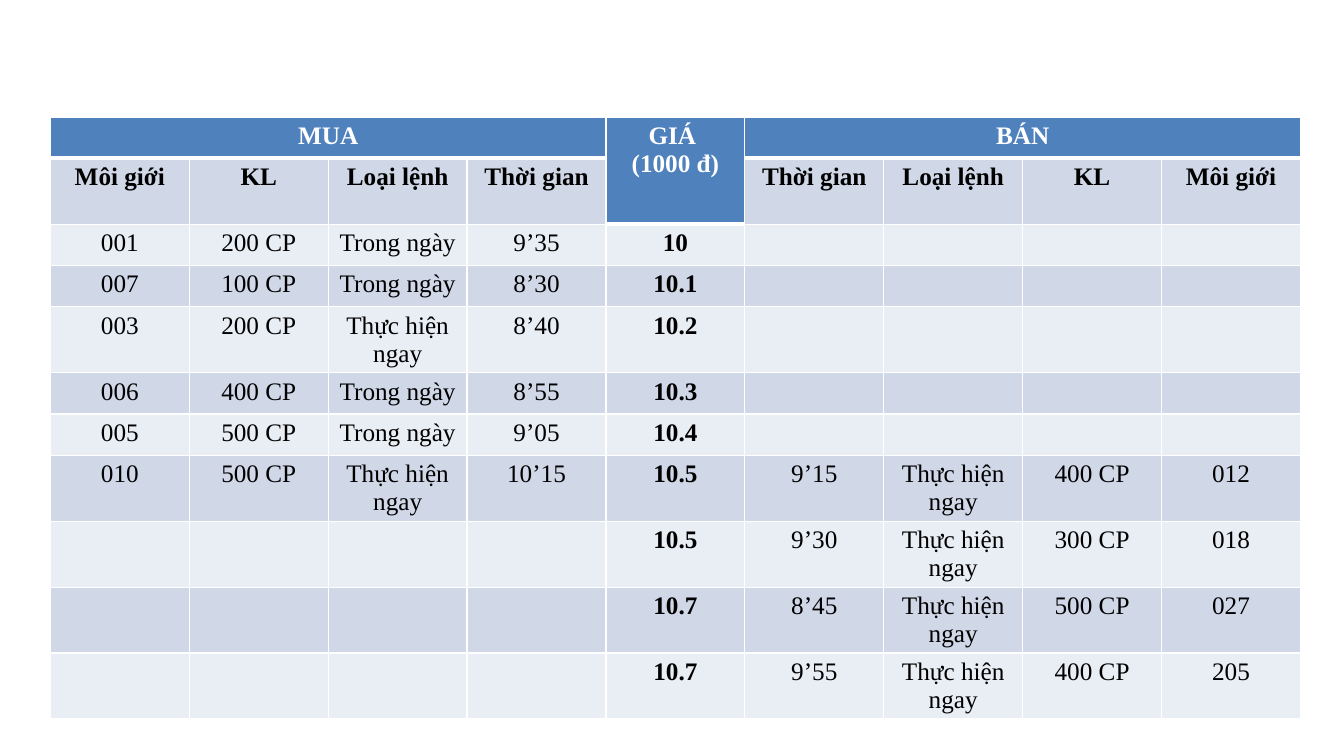
from dataclasses import dataclass

import pptx
import pptx.dml.color
import pptx.enum.text
import pptx.oxml
import pptx.oxml.ns
import pptx.util
from pptx.util import Inches


@dataclass(frozen=True)
class Theme:
    """Colours, font and sizes of the order book."""
    font: str = "Times New Roman"
    size: int = 18
    header: str = "4F81BD"
    bands: tuple = ("D0D8E8", "E9EDF4")
    light: str = "FFFFFF"
    dark: str = "000000"
    thin: int = 1
    thick: int = 3


THEME = Theme()
PRICE_COLUMN = 4
SIDE_HEADINGS = ["Môi giới", "KL", "Loại lệnh", "Thời gian"]
DAY, NOW = "Trong ngày", "Thực hiện ngay"
NO_ORDER = [""] * 4
ORDERS = [
    (["001", "200 CP", DAY, "9’35"], "10", NO_ORDER),
    (["007", "100 CP", DAY, "8’30"], "10.1", NO_ORDER),
    (["003", "200 CP", NOW, "8’40"], "10.2", NO_ORDER),
    (["006", "400 CP", DAY, "8’55"], "10.3", NO_ORDER),
    (["005", "500 CP", DAY, "9’05"], "10.4", NO_ORDER),
    (["010", "500 CP", NOW, "10’15"], "10.5", ["9’15", NOW, "400 CP", "012"]),
    (NO_ORDER, "10.5", ["9’30", NOW, "300 CP", "018"]),
    (NO_ORDER, "10.7", ["8’45", NOW, "500 CP", "027"]),
    (NO_ORDER, "10.7", ["9’55", NOW, "400 CP", "205"]),
]


def write_cell(cell, lines, colour, bold):
    """Write centred lines into a cell."""
    frame = cell.text_frame
    for index, line in enumerate(lines):
        paragraph = frame.add_paragraph() if index else frame.paragraphs[0]
        paragraph.alignment = pptx.enum.text.PP_ALIGN.CENTER
        if line:
            run = paragraph.add_run()
            run.text = line
            run.font.name = THEME.font
            run.font.size = pptx.util.Pt(THEME.size)
            run.font.bold = bold
            run.font.color.rgb = pptx.dml.color.RGBColor.from_string(colour)


def paint_cell(cell, fill, top, bottom):
    """Give a cell its fill and white borders."""
    properties = cell._tc.get_or_add_tcPr()
    widths = {"L": THEME.thin, "R": THEME.thin, "T": top, "B": bottom}
    for side, points in widths.items():
        properties.append(pptx.oxml.parse_xml(
            f'<a:ln{side} {pptx.oxml.ns.nsdecls("a")} w="{pptx.util.Pt(points)}">'
            f'<a:solidFill><a:srgbClr val="{THEME.light}"/></a:solidFill></a:ln{side}>'))
    cell.fill.solid()
    cell.fill.fore_color.rgb = pptx.dml.color.RGBColor.from_string(fill)


def paint_book(book):
    """Paint the header cells and the alternating bands."""
    def in_header(row, column):
        return row == 0 or (row == 1 and column == PRICE_COLUMN)

    for row in range(len(book.rows)):
        for column in range(len(book.columns)):
            header = in_header(row, column)
            below_header = row > 0 and not header and in_header(row - 1, column)
            paint_cell(book.cell(row, column),
                       THEME.header if header else THEME.bands[(row - 1) % 2],
                       THEME.thick if below_header else THEME.thin,
                       THEME.thick if header else THEME.thin)


def add_order_book(slide):
    """Add the table of buy and sell orders around the price column."""
    headings = SIDE_HEADINGS + [""] + SIDE_HEADINGS[::-1]
    rows = [headings] + [buy + [price] + sell for buy, price, sell in ORDERS]
    book = slide.shapes.add_table(
        len(rows) + 1, len(headings), Inches(0.5), Inches(1.16),
        Inches(12.4), Inches(5.93)).table
    for column in book.columns:
        column.width = int(Inches(12.4) / len(headings))
    book.rows[0].height = Inches(0.41)
    for row, values in enumerate(rows, start=1):
        tall = row == 1 or NOW in values
        book.rows[row].height = Inches(0.65 if tall else 0.41)
        for column, value in enumerate(values):
            bold = row == 1 or column == PRICE_COLUMN
            write_cell(book.cell(row, column), [value], THEME.dark, bold)
    paint_book(book)

    book.cell(0, 0).merge(book.cell(0, PRICE_COLUMN - 1))
    book.cell(0, PRICE_COLUMN).merge(book.cell(1, PRICE_COLUMN))
    book.cell(0, PRICE_COLUMN + 1).merge(book.cell(0, len(headings) - 1))
    titles = {0: ["MUA"], PRICE_COLUMN: ["GIÁ ", "(1000 đ)"], PRICE_COLUMN + 1: ["BÁN"]}
    for column, lines in titles.items():
        write_cell(book.cell(0, column), lines, THEME.light, True)


def main():
    """Build the order book slide and save it."""
    deck = pptx.Presentation()
    deck.slide_width = Inches(13.33)
    deck.slide_height = Inches(7.5)
    slide = deck.slides.add_slide(deck.slide_layouts[6])
    add_order_book(slide)
    deck.save("out.pptx")


if __name__ == "__main__":
    main()
